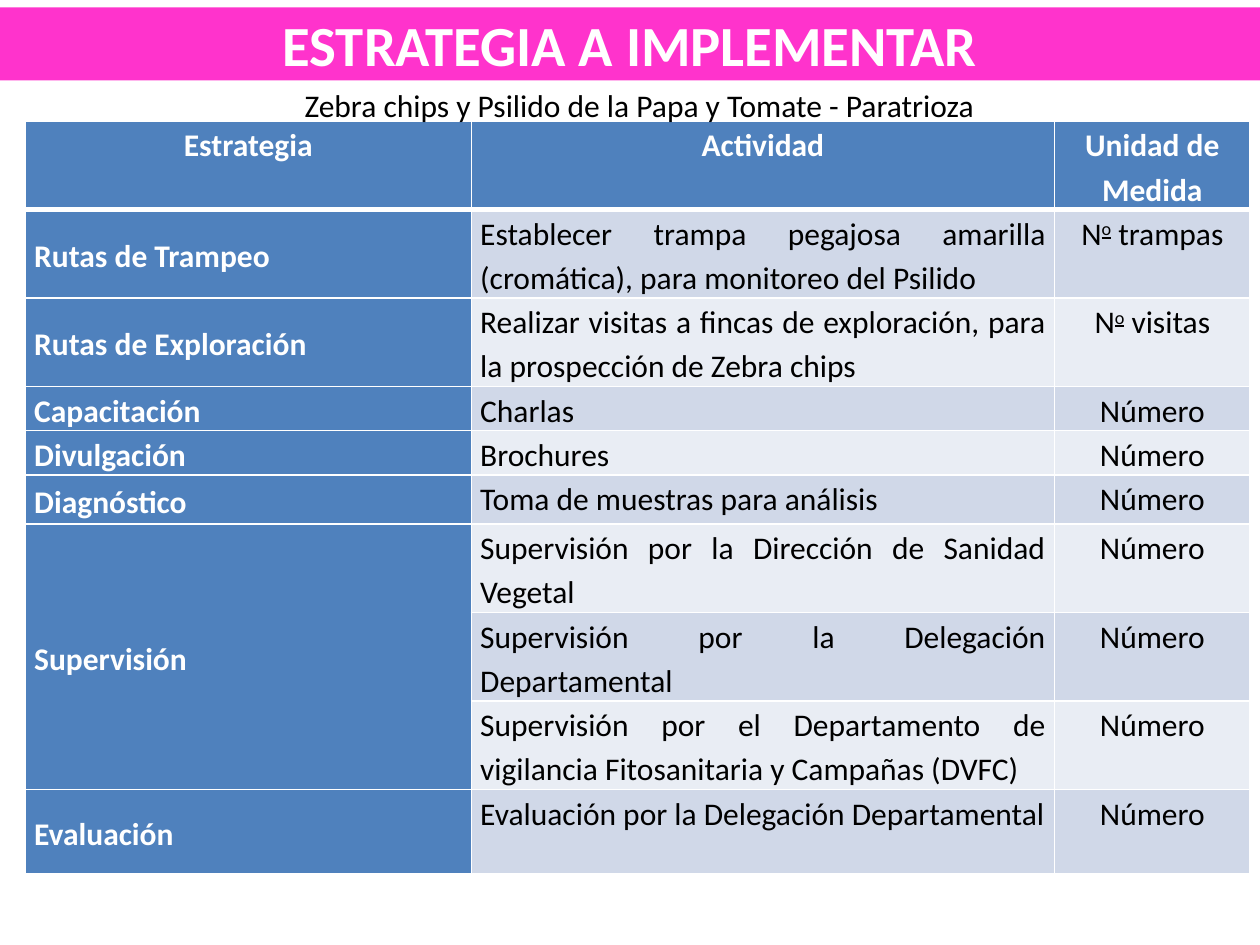
import lxml.etree
import pptx
import pptx.dml.color
import pptx.enum.text
import pptx.oxml.ns
import pptx.util

Cm = pptx.util.Cm
Pt = pptx.util.Pt
ALIGN = pptx.enum.text.PP_ALIGN
ANCHOR = pptx.enum.text.MSO_ANCHOR

COLORS = {
    "banner": "FF33CC",
    "header": "4F81BD",
    "band_dark": "D0D8E8",
    "band_light": "E9EDF4",
    "white": "FFFFFF",
    "black": "000000",
}
COLUMN_WIDTHS = [8.99, 11.76, 3.94]
ROW_HEIGHTS = [1.22, 0.69, 1.37, 0.86, 0.79, 0.99, 1.22, 1.7, 0.79, 1.7]
HEADINGS = ["Estrategia", "Actividad", "Unidad de Medida"]
ORDINAL = "o"
STRATEGIES = [
    ("Rutas de Trampeo", [
        ("Establecer trampa pegajosa amarilla (cromática), para monitoreo del Psilido",
         ["N", ORDINAL, " trampas"])]),
    ("Rutas de Exploración", [
        ("Realizar visitas a fincas de exploración, para la prospección de Zebra chips",
         ["N", ORDINAL, " visitas"])]),
    ("Capacitación", [("Charlas", ["Número"])]),
    ("Divulgación", [("Brochures", ["Número"])]),
    ("Diagnóstico", [("Toma de muestras para análisis", ["Número"])]),
    ("Supervisión", [
        ("Supervisión por la Dirección de Sanidad Vegetal", ["Número"]),
        ("Supervisión por la Delegación Departamental", ["Número"]),
        ("Supervisión por el Departamento de vigilancia Fitosanitaria y Campañas (DVFC)",
         ["Número"])]),
    ("Evaluación", [("Evaluación por la Delegación Departamental", ["Número"])]),
]


class SlideBuilder:
    font_name = "Calibri"
    body_size = 18

    def __init__(self, slide):
        self.slide = slide

    def color(self, name):
        return pptx.dml.color.RGBColor.from_string(COLORS[name])

    def paint(self, target, name):
        target.fill.solid()
        target.fill.fore_color.rgb = self.color(name)

    def style(self, span, color, size=body_size, bold=False):
        span.font.name = self.font_name
        span.font.size = Pt(size)
        span.font.bold = bold
        span.font.color.rgb = self.color(color)

    def title(self, text, left, top, width, height):
        banner = self.slide.shapes.title
        banner.left, banner.top = Cm(left), Cm(top)
        banner.width, banner.height = Cm(width), Cm(height)
        self.paint(banner, "banner")
        frame = banner.text_frame
        frame.text = text
        frame.auto_size = pptx.enum.text.MSO_AUTO_SIZE.NONE
        frame.vertical_anchor = ANCHOR.MIDDLE
        para = frame.paragraphs[0]
        para.alignment = ALIGN.CENTER
        self.style(para.runs[0], "white", 32.4, True)

    def caption(self, text, left, top, width, height):
        box = self.slide.shapes.add_textbox(Cm(left), Cm(top), Cm(width), Cm(height))
        frame = box.text_frame
        frame.text = text
        frame.word_wrap = True
        self.style(frame.paragraphs[0].runs[0], "black")

    def borders(self, cell, bottom):
        properties = cell._tc.get_or_add_tcPr()
        for side, width in (("L", 1), ("R", 1), ("T", 1), ("B", bottom)):
            line = lxml.etree.SubElement(
                properties, pptx.oxml.ns.qn("a:ln" + side), w=str(Pt(width)))
            fill = lxml.etree.SubElement(line, pptx.oxml.ns.qn("a:solidFill"))
            lxml.etree.SubElement(
                fill, pptx.oxml.ns.qn("a:srgbClr"), val=COLORS["white"])

    def cell(self, cell, parts, fill, color, align, bold=False,
             anchor=ANCHOR.TOP, bottom=1):
        cell.margin_left = cell.margin_right = Cm(0.18)
        cell.margin_top = cell.margin_bottom = 0
        cell.vertical_anchor = anchor
        self.borders(cell, bottom)
        self.paint(cell, fill)
        para = cell.text_frame.paragraphs[0]
        para.alignment = align
        para.line_spacing = 1.15
        for part in parts:
            span = para.add_run()
            span.text = part
            self.style(span, color, bold=bold)
            if part == ORDINAL:
                span.font.underline = True
                span._r.get_or_add_rPr().set("baseline", "30000")

    def table(self, left, top, width, height):
        frame = self.slide.shapes.add_table(
            len(ROW_HEIGHTS), len(COLUMN_WIDTHS), Cm(left), Cm(top), Cm(width), Cm(height))
        table = frame.table
        for column, size in zip(table.columns, COLUMN_WIDTHS):
            column.width = Cm(size)
        for row, size in zip(table.rows, ROW_HEIGHTS):
            row.height = Cm(size)
        for index, heading in enumerate(HEADINGS):
            self.cell(table.cell(0, index), [heading], "header", "white",
                      ALIGN.CENTER, bold=True, bottom=3)
        row = 1
        for strategy, activities in STRATEGIES:
            first = table.cell(row, 0)
            if len(activities) > 1:
                first.merge(table.cell(row + len(activities) - 1, 0))
            self.cell(first, [strategy], "header", "white", ALIGN.JUSTIFY,
                      bold=True, anchor=ANCHOR.MIDDLE)
            for activity, unit in activities:
                band = "band_dark" if row % 2 else "band_light"
                self.cell(table.cell(row, 1), [activity], band, "black", ALIGN.JUSTIFY)
                self.cell(table.cell(row, 2), unit, band, "black", ALIGN.CENTER)
                row += 1
        frame.height = Cm(height)


def main():
    deck = pptx.Presentation()
    deck.slide_width, deck.slide_height = Cm(25.4), Cm(19.05)
    page = SlideBuilder(deck.slides.add_slide(deck.slide_layouts[5]))
    page.title("ESTRATEGIA A IMPLEMENTAR", 0, 0.15, 25.4, 1.47)
    page.table(0.51, 2.44, 24.69, 14.6)
    page.caption("Zebra chips y Psilido de la Papa y Tomate - Paratrioza",
                 5.89, 1.6, 15.19, 1.02)
    deck.save("out.pptx")


if __name__ == "__main__":
    main()
